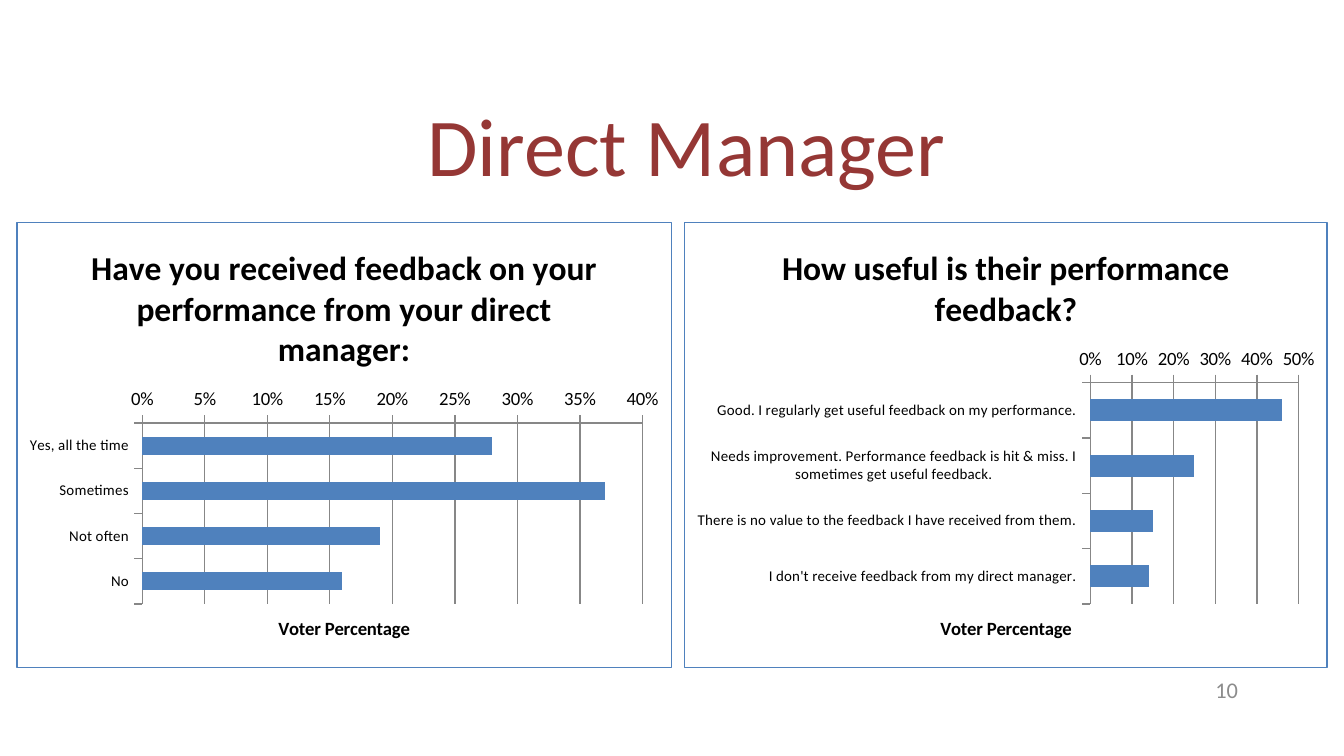
from dataclasses import dataclass

from pptx import Presentation
from pptx.chart.data import CategoryChartData
from pptx.dml.color import RGBColor
from pptx.enum.chart import XL_CHART_TYPE, XL_TICK_MARK
from pptx.enum.text import MSO_ANCHOR, MSO_AUTO_SIZE, PP_ALIGN
from pptx.oxml import parse_xml
from pptx.oxml.ns import nsdecls
from pptx.util import Inches, Pt


@dataclass(frozen=True)
class Theme:
    font: str = "Calibri"
    heading: str = "953735"
    ink: str = "000000"
    bar: str = "4F81BD"
    grid: str = "878787"
    muted: str = "8C8C8C"
    heading_size: int = 44
    question_size: int = 18
    number_size: int = 12
    chart_size: int = 10
    answer_size: int = 8


THEME = Theme()


def set_text(frame, text, size, color=THEME.ink, bold=False, align=None, spacing=None):
    frame.text = text
    paragraph = frame.paragraphs[0]
    paragraph.alignment = align
    paragraph.line_spacing = spacing
    font = paragraph.runs[0].font
    font.name = THEME.font
    font.size = Pt(size)
    font.bold = bold
    font.color.rgb = RGBColor.from_string(color)


prs = Presentation()
prs.slide_width = Inches(10)
prs.slide_height = Inches(10 * 9 / 16)
slide = prs.slides.add_slide(prs.slide_layouts[5])

heading = slide.shapes.title
heading.left, heading.top = Inches(0.8), Inches(0.57)
heading.width, heading.height = Inches(8.62), Inches(1.09)
heading.text_frame.vertical_anchor = MSO_ANCHOR.MIDDLE
heading.text_frame.auto_size = MSO_AUTO_SIZE.NONE
set_text(heading.text_frame, "Direct Manager", THEME.heading_size, THEME.heading,
         align=PP_ALIGN.CENTER, spacing=0.9)

# left, width, question, axis maximum, axis step, share of voters per answer
polls = [
    (5.09, 4.79, "How useful is their performance feedback?", 0.5, 0.1, {
        "Good. I regularly get useful feedback on my performance.": 0.46,
        "Needs improvement. Performance feedback is hit & miss. "
        "I sometimes get useful feedback.": 0.25,
        "There is no value to the feedback I have received from them.": 0.15,
        "I don't receive feedback from my direct manager.": 0.14,
    }),
    (0.12, 4.88, "Have you received feedback on your performance from your direct manager:",
     0.4, 0.05, {
         "Yes, all the time": 0.28,
         "Sometimes": 0.37,
         "Not often": 0.19,
         "No": 0.16,
     }),
]

for left, width, question, maximum, step, shares in polls:
    poll_data = CategoryChartData(number_format="0%")
    poll_data.categories = list(shares)
    poll_data.add_series("Series 1", list(shares.values()))
    chart = slide.shapes.add_chart(
        XL_CHART_TYPE.BAR_CLUSTERED, Inches(left), Inches(1.65),
        Inches(width), Inches(3.32), poll_data).chart
    chart.has_legend = False
    chart.font.name = THEME.font
    chart.font.size = Pt(THEME.chart_size)
    chart.font.color.rgb = RGBColor.from_string(THEME.ink)
    chart.has_title = True
    set_text(chart.chart_title.text_frame, question, THEME.question_size, bold=True)

    answers = chart.category_axis
    answers.reverse_order = True
    answers.tick_labels.font.size = Pt(THEME.answer_size)

    votes = chart.value_axis
    votes.minimum_scale, votes.maximum_scale, votes.major_unit = 0, maximum, step
    votes.has_major_gridlines = True
    votes.tick_labels.number_format = "0%"
    votes.tick_labels.number_format_is_linked = False
    set_text(votes.axis_title.text_frame, "Voter Percentage", THEME.chart_size, bold=True)

    for axis in (answers, votes):
        axis.major_tick_mark = XL_TICK_MARK.OUTSIDE
    for line in (answers.format.line, votes.format.line, votes.major_gridlines.format.line):
        line.width = Pt(0.75)
        line.color.rgb = RGBColor.from_string(THEME.grid)

    plot = chart.plots[0]
    plot.gap_width = 150
    plot.vary_by_categories = False
    bars = plot.series[0]
    bars.format.fill.solid()
    bars.format.fill.fore_color.rgb = RGBColor.from_string(THEME.bar)

    # The frame around the chart has no public property
    border = parse_xml(
        f'<c:spPr {nsdecls("c", "a")}><a:noFill/><a:ln w="{Pt(0.75)}"><a:solidFill>'
        f'<a:srgbClr val="{THEME.bar}"/></a:solidFill></a:ln></c:spPr>')
    chart.element.chart.addnext(border)

page_number = slide.shapes.add_textbox(
    Inches(7.06), Inches(4.98), Inches(2.25), Inches(0.3)).text_frame
page_number.word_wrap = True
page_number.vertical_anchor = MSO_ANCHOR.MIDDLE
set_text(page_number, "10", THEME.number_size, THEME.muted, align=PP_ALIGN.RIGHT)

prs.save("out.pptx")
